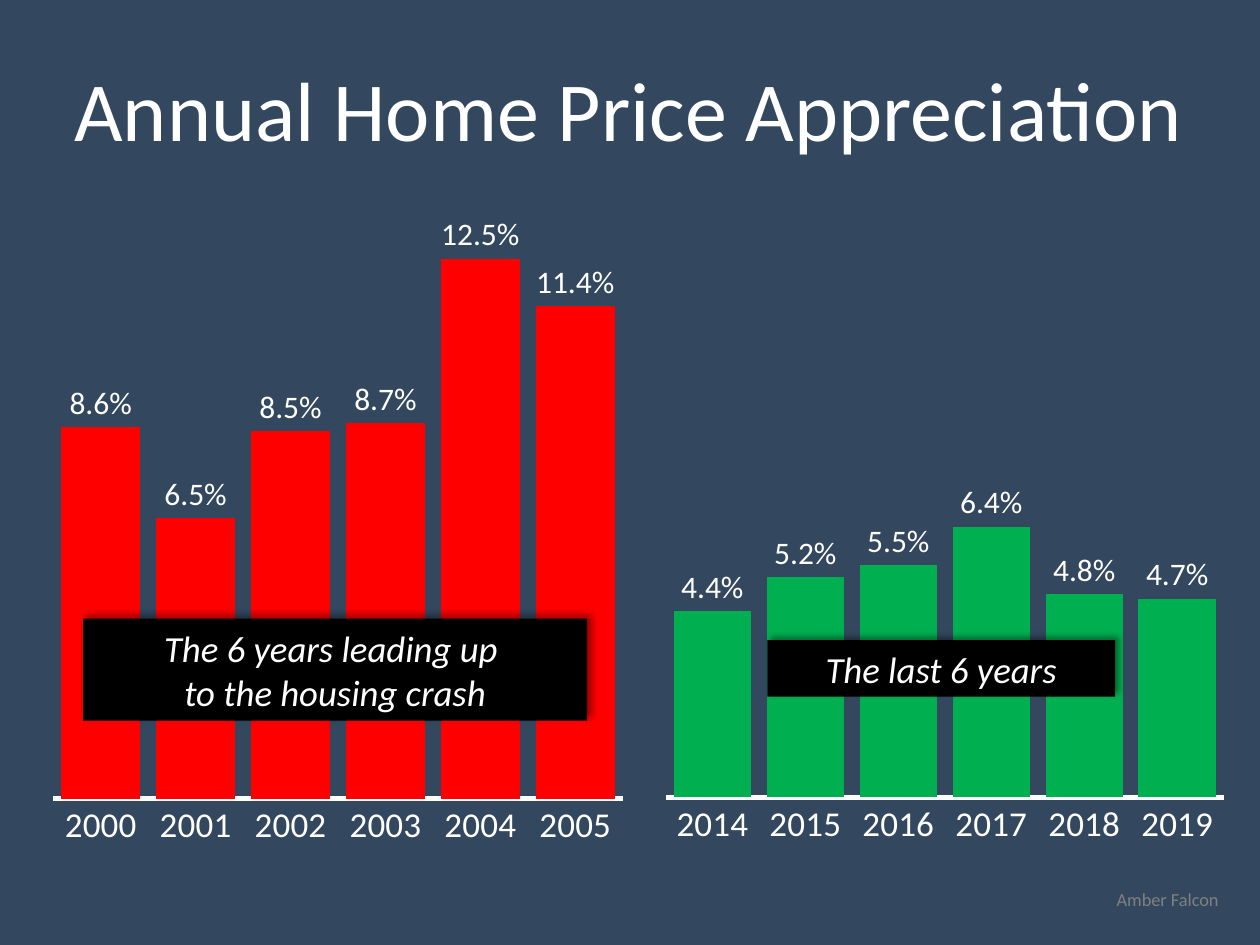
from lxml import etree
from pptx import Presentation
from pptx import util as u
from pptx.chart.data import CategoryChartData
from pptx.dml.color import RGBColor
from pptx.enum import chart as charts, shapes, text
from pptx.oxml import parse_xml
from pptx.oxml.ns import nsdecls, qn

NAVY = RGBColor(0x33, 0x48, 0x5F)
WHITE = RGBColor(0xFF, 0xFF, 0xFF)
BLACK = RGBColor(0x00, 0x00, 0x00)
GREY = RGBColor(0x80, 0x80, 0x80)
RED = RGBColor(0xFF, 0x00, 0x00)
GREEN = RGBColor(0x00, 0xB0, 0x50)


class SlideBuilder:
    """Holds the style and the current slide."""

    font_name = "Calibri"

    def __init__(self, slide):
        self.slide = slide

    def style_font(self, font, size, color=WHITE, **extra):
        values = {"name": self.font_name, "size": u.Pt(size), **extra}
        for name, value in values.items():
            setattr(font, name, value)
        font.color.rgb = color

    def fill_text(self, shape, lines, size, align, color=WHITE, **extra):
        frame = shape.text_frame
        frame.word_wrap = True
        frame.auto_size = text.MSO_AUTO_SIZE.SHAPE_TO_FIT_TEXT
        for index, line in enumerate(lines):
            paragraph = frame.add_paragraph() if index else frame.paragraphs[0]
            paragraph.alignment = align
            run = paragraph.add_run()
            run.text = line
            self.style_font(run.font, size, color, **extra)

    def panel(self, box, fill):
        shape = self.slide.shapes.add_shape(
            shapes.MSO_SHAPE.RECTANGLE, *map(u.Inches, box))
        shape.shadow.inherit = False
        shape.fill.solid()
        shape.fill.fore_color.rgb = fill
        shape.line.fill.background()
        return shape

    def label(self, box, line, size, align, color=WHITE):
        shape = self.slide.shapes.add_textbox(*map(u.Inches, box))
        self.fill_text(shape, [line], size, align, color)

    def callout(self, box, lines):
        shape = self.panel(box, BLACK)
        effects = shape._element.spPr.find(qn("a:effectLst"))
        effects.append(parse_xml(
            f'<a:outerShdw {nsdecls("a")} blurRad="{u.Pt(4)}" dist="{u.Pt(3)}" '
            'dir="18900000" algn="bl" rotWithShape="0">'
            '<a:srgbClr val="000000"><a:alpha val="40000"/></a:srgbClr>'
            '</a:outerShdw>'))
        self.fill_text(shape, lines, 21, text.PP_ALIGN.CENTER, italic=True)

    def column_chart(self, box, first_year, values, color, plot_box):
        data = CategoryChartData(number_format="0.0%")
        data.categories = [str(first_year + i) for i in range(len(values))]
        data.add_series("Series 1", values)
        chart = self.slide.shapes.add_chart(
            charts.XL_CHART_TYPE.COLUMN_CLUSTERED,
            *map(u.Inches, box), data).chart
        self.style_font(chart.font, 10, BLACK)

        # Axes
        category_axis, value_axis = chart.category_axis, chart.value_axis
        settings = [
            (chart, {"has_legend": False, "has_title": False}),
            (category_axis, {"major_tick_mark": charts.XL_TICK_MARK.NONE,
                             "has_major_gridlines": False}),
            (value_axis, {"minimum_scale": 0, "maximum_scale": 0.14,
                          "has_major_gridlines": False, "visible": False}),
        ]
        for target, options in settings:
            for name, value in options.items():
                setattr(target, name, value)
        self.style_font(category_axis.tick_labels.font, 20)
        category_axis.format.line.color.rgb = WHITE
        category_axis.format.line.width = u.Pt(3)

        # Columns and their labels
        plot = chart.plots[0]
        plot.vary_by_categories = False
        plot.gap_width, plot.overlap = 20, -27
        fill = plot.series[0].format.fill
        fill.solid()
        fill.fore_color.rgb = color
        plot.has_data_labels = True
        labels = plot.data_labels
        options = {"show_value": True, "number_format": "0.0%",
                   "number_format_is_linked": False,
                   "position": charts.XL_LABEL_POSITION.OUTSIDE_END}
        for name, value in options.items():
            setattr(labels, name, value)
        self.style_font(labels.font, 18)
        self.place_plot(chart, plot_box)

    def place_plot(self, chart, plot_box):
        """Fix the inner plot area, in fractions of the chart."""
        area = chart._chartSpace.chart.plotArea
        for old in area.findall(qn("c:layout")):
            area.remove(old)
        layout = etree.Element(qn("c:layout"))
        manual = etree.SubElement(layout, qn("c:manualLayout"))
        entries = [("layoutTarget", "inner"), ("xMode", "edge"), ("yMode", "edge"),
                   *zip("xywh", map(str, plot_box))]
        for tag, value in entries:
            etree.SubElement(manual, qn(f"c:{tag}")).set("val", value)
        area.insert(0, layout)


def main():
    presentation = Presentation()
    presentation.slide_width = u.Inches(10)
    presentation.slide_height = u.Inches(7.5)
    builder = SlideBuilder(
        presentation.slides.add_slide(presentation.slide_layouts[6]))

    # Backdrop and credit
    builder.panel((-0.01, 0, 10.09, 7.5), NAVY)
    builder.label((8.55, 7, 1.22, 0.28), "Amber Falcon", 10.5,
                  text.PP_ALIGN.RIGHT, GREY)

    # Charts
    builder.column_chart((0.33, 1.54, 4.66, 5.18), 2000,
                         (0.086, 0.065, 0.085, 0.087, 0.125, 0.114),
                         RED, (0.02, 0, 0.97, 0.93))
    builder.column_chart((5.1, 1.63, 4.66, 5.08), 2014,
                         (0.044, 0.052, 0.055, 0.064, 0.048, 0.047),
                         GREEN, (0.04, 0, 0.95, 0.93))

    # Callouts
    builder.callout((0.66, 4.91, 4, 0.81),
                    ["The 6 years leading up ", "to the housing crash"])
    builder.callout((6.09, 5.08, 2.76, 0.45), ["The last 6 years"])

    # Title
    builder.label((-0.01, 0.41, 10, 0.91), "Annual Home Price Appreciation",
                  48, text.PP_ALIGN.CENTER)

    presentation.save("out.pptx")


if __name__ == "__main__":
    main()
